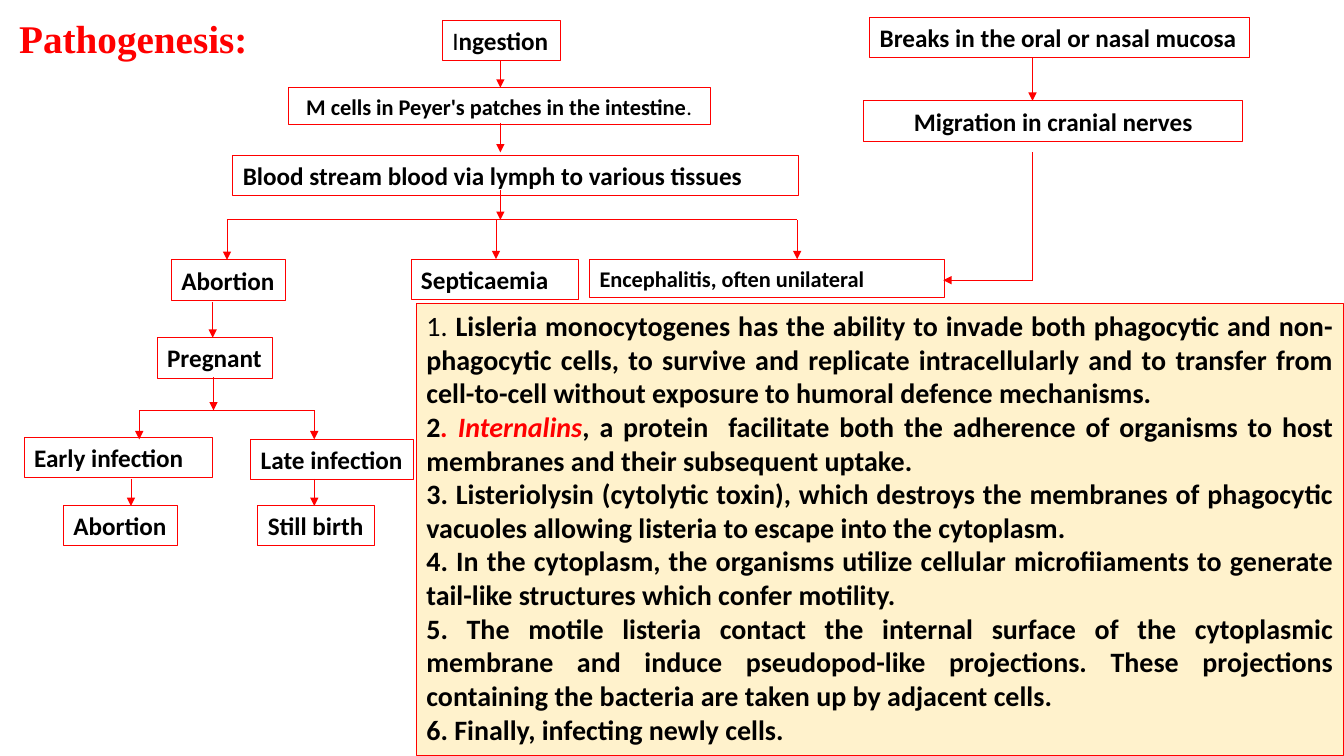
from lxml import etree
from pptx import Presentation
from pptx.dml.color import RGBColor
from pptx.enum.shapes import MSO_CONNECTOR, MSO_SHAPE
from pptx.enum.text import MSO_ANCHOR, MSO_AUTO_SIZE, PP_ALIGN
from pptx.oxml.ns import qn
from pptx.util import Cm, Pt

LINE = MSO_CONNECTOR.STRAIGHT
RECT = MSO_SHAPE.RECTANGLE
TOP, MID = MSO_ANCHOR.TOP, MSO_ANCHOR.MIDDLE
FIXED = MSO_AUTO_SIZE.NONE
LEFT, CENTER, JUST = PP_ALIGN.LEFT, PP_ALIGN.CENTER, PP_ALIGN.JUSTIFY
RED, BLACK, CREAM = "FF0000", "000000", "FFF2CC"


def paint(color, tone):
    color.rgb = RGBColor.from_string(tone)


def write(par, text, tone=BLACK, **form):
    run = par.add_run()
    run.text = text
    base = {"name": "Calibri", "size": Pt(18), "bold": True, "italic": False}
    for key, value in {**base, **form}.items():
        setattr(run.font, key, value)
    paint(run.font.color, tone)


deck = Presentation()
deck.slide_width, deck.slide_height = Cm(33.87), Cm(19.05)
slide = deck.slides.add_slide(deck.slide_layouts[1])
title, notes = slide.placeholders

places = [
    (title, {"left": 0.23, "top": 0.36, "width": 9, "height": 1.5}),
    (notes, {"left": 10.49, "top": 7.65, "width": 23.37, "height": 11.38}),
]
for holder, place in places:
    for key, value in place.items():
        setattr(holder, key, Cm(value))
    frame = holder.text_frame
    frame.auto_size = FIXED
    frame.word_wrap = True
    frame.vertical_anchor = TOP

head = title.text_frame.paragraphs[0]
for key, value in {"alignment": LEFT, "line_spacing": 0.9, "space_before": Pt(10)}.items():
    setattr(head, key, value)
write(head, "Pathogenesis:", RED, name="Times New Roman", size=Pt(28))

boxes = [
    (11.15, 0.51, 2.97, "Ingestion", {}),
    (7.26, 2.21, 10.64, "M cells in Peyer's patches in the intestine.",
     {"size": 16, "wrap": True, "align": CENTER}),
    (5.87, 3.91, 14.25, "Blood stream blood via lymph to various tissues", {"wrap": True}),
    (4.32, 6.55, 2.87, "Abortion", {}),
    (10.36, 6.53, 4.22, "Septicaemia", {"wrap": True}),
    (14.86, 6.55, 8.94, "Encephalitis, often unilateral", {"size": 16, "wrap": True}),
    (3.96, 8.51, 2.92, "Pregnant", {}),
    (0.61, 11.02, 4.75, "Early infection", {"wrap": True}),
    (6.32, 11.07, 4.11, "Late infection", {}),
    (1.6, 12.73, 2.87, "Abortion", {}),
    (6.5, 12.73, 2.95, "Still birth", {}),
    (21.92, 0.43, 9.58, "Breaks in the oral or nasal mucosa", {}),
    (21.77, 2.54, 9.55, "Migration in cranial nerves", {"wrap": True, "align": CENTER}),
]
light = {"Ingestion": (1, False), boxes[1][3]: (len(boxes[1][3]) - 1, True)}
for left, top, width, text, form in boxes:
    size = form.get("size", 18)
    tall = 1.02 if size == 18 else 0.94
    box = slide.shapes.add_shape(RECT, Cm(left), Cm(top), Cm(width), Cm(tall))
    box.shadow.inherit = False
    box.fill.background()
    paint(box.line.color, RED)
    box.line.width = Pt(0.75)
    frame = box.text_frame
    frame.word_wrap = form.get("wrap", False)
    frame.vertical_anchor = MID
    par = frame.paragraphs[0]
    par.alignment = form.get("align", LEFT)
    cut, bold = light.get(text, (len(text), True))
    write(par, text[:cut], size=Pt(size), bold=bold)
    if cut < len(text):
        write(par, text[cut:], size=Pt(size), bold=not bold)

fork, split, nerve = 5.54, 10.34, 26.02
bars = [
    (5.72, fork, 20.09, fork),
    (3.51, split, 7.92, split),
    (nerve, 3.84, nerve, 7.06),
]
drops = [
    (12.61, 1.52, 2.21), (12.61, 3.1, 3.84), (12.61, 4.78, fork),
    (5.72, fork, 6.55), (12.5, fork, 6.53), (20.09, fork, 6.53),
    (5.36, 7.62, 8.51), (5.38, 9.5, split),
    (3.51, split, 11.07), (7.92, split, 11.07),
    (3.3, 12.07, 12.75), (7.92, 12.07, 12.75),
    (nerve, 1.45, 2.54),
]
links = [(*bar, False) for bar in bars]
links += [(x, start, x, end, True) for x, start, end in drops]
links.append((nerve, 7.06, 23.77, 7.06, True))
for *ends, arrow in links:
    link = slide.shapes.add_connector(LINE, *[Cm(end) for end in ends])
    paint(link.line.color, RED)
    link.line.width = Pt(0.5)
    if arrow:
        etree.SubElement(link.line._get_or_add_ln(), qn("a:tailEnd"), type="triangle")
    etree.SubElement(link._element.spPr, qn("a:effectLst"))

notes.fill.solid()
paint(notes.fill.fore_color, CREAM)
paint(notes.line.color, RED)
notes.line.width = Pt(0.75)
points = [
    [("1. ", {"bold": False}),
     ("Lisleria monocytogenes has the ability to invade both phagocytic and "
      "non-phagocytic cells, to survive and replicate intracellularly and to transfer "
      "from cell-to-cell without exposure to humoral defence mechanisms.", {})],
    [("2", {}), (". Internalins", {"tone": RED, "italic": True}),
     (", a protein  facilitate both the adherence of organisms to host membranes "
      "and their subsequent uptake.", {})],
    [("3. Listeriolysin (cytolytic toxin), which destroys the membranes of phagocytic "
      "vacuoles allowing listeria to escape into the cytoplasm.", {})],
    [("4. In the cytoplasm, the organisms utilize cellular microfiiaments to generate "
      "tail-like structures which confer motility.", {})],
    [("5. The motile listeria contact the internal surface of the cytoplasmic membrane "
      "and induce pseudopod-like projections. These projections containing the bacteria "
      "are taken up by adjacent cells.", {})],
    [("6. Finally, infecting newly cells.", {})],
]
frame = notes.text_frame
for rank, point in enumerate(points):
    par = frame.add_paragraph() if rank else frame.paragraphs[0]
    for key, value in {"alignment": JUST, "space_before": Pt(0), "line_spacing": 1.0}.items():
        setattr(par, key, value)
    props = par._p.get_or_add_pPr()
    for key in ("marL", "indent"):
        props.set(key, "0")
    etree.SubElement(props, qn("a:buNone"))
    for text, form in point:
        write(par, text, size=Pt(20), **form)

deck.save("out.pptx")
